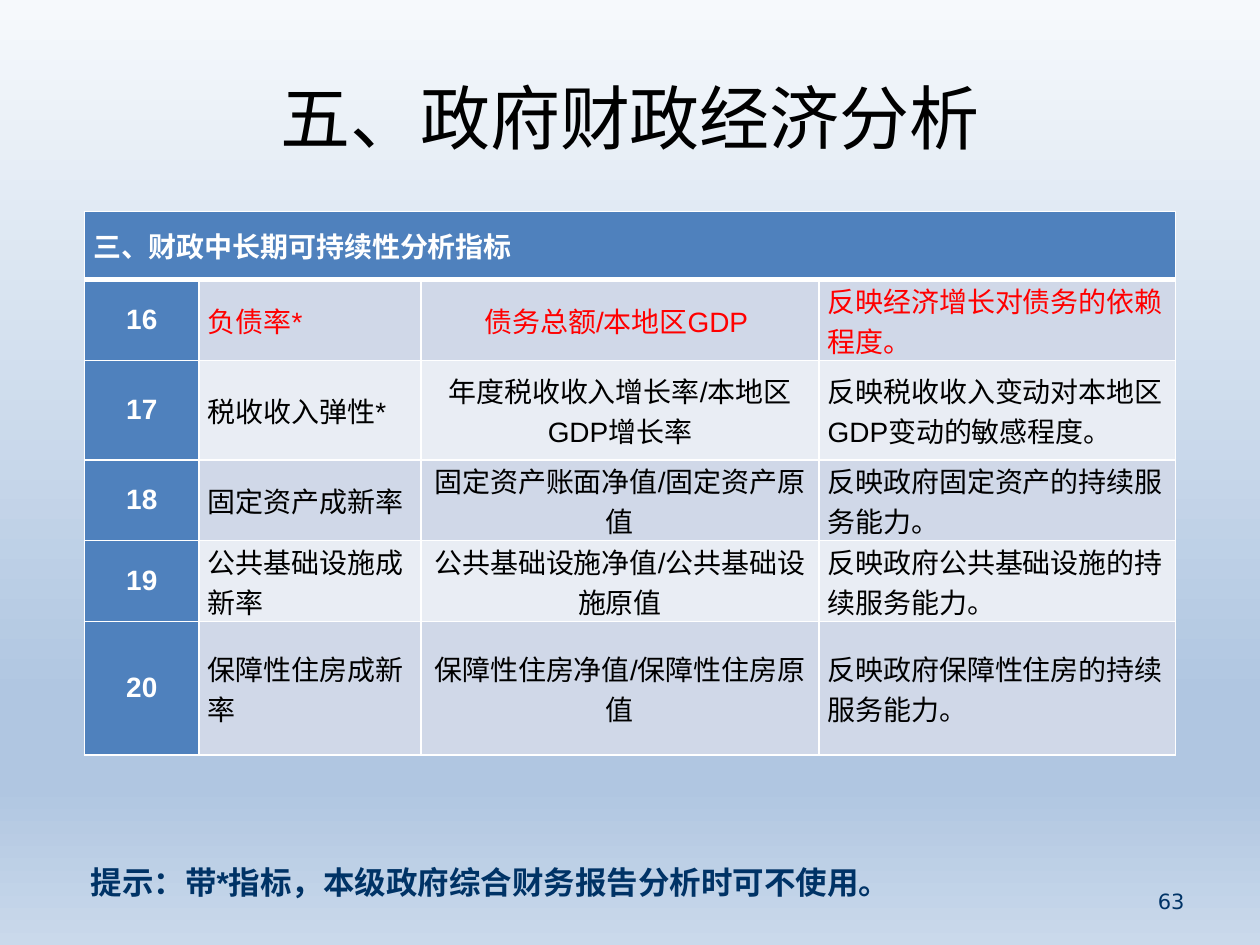
"""Build the slide on long-term fiscal sustainability indicators."""
from dataclasses import dataclass

from lxml import etree
from pptx import Presentation
from pptx import util as u
from pptx.dml import color
from pptx.enum import text
from pptx.oxml import ns

WHITE, BLACK, RED, NAVY, BLUE = "FFFFFF", "000000", "FF0000", "003366", "4F81BD"
BANDS = ("D0D8E8", "E9EDF4")
BACKGROUND_STOPS = ((0, "F6F9FC"), (74, "B0C6E1"), (83, "B0C6E1"), (100, "CAD9EB"))
COLUMN_WIDTHS = (0.91, 1.76, 3.16, 2.83)
ROW_HEIGHTS = (0.54, 0.54, 0.79, 0.56, 0.64, 1.06)
LEFT, CENTER, RIGHT = text.PP_ALIGN.LEFT, text.PP_ALIGN.CENTER, text.PP_ALIGN.RIGHT
CELL_FORMAT = {
    "margin_left": u.Inches(0.07),
    "margin_right": u.Inches(0.07),
    "margin_top": 0,
    "margin_bottom": 0,
    "vertical_anchor": text.MSO_ANCHOR.MIDDLE,
}


@dataclass
class Style:
    size: float
    color: str
    bold: bool = False
    align: text.PP_ALIGN = LEFT
    font: str = "Arial"


@dataclass
class Indicator:
    number: str
    name: str
    formula: str
    meaning: str
    color: str = BLACK


INDICATORS = (
    Indicator("16", "负债率*", "债务总额/本地区GDP ", "反映经济增长对债务的依赖程度。", RED),
    Indicator("17", "税收收入弹性*", "年度税收收入增长率/本地区GDP增长率",
              "反映税收收入变动对本地区GDP变动的敏感程度。"),
    Indicator("18", "固定资产成新率", "固定资产账面净值/固定资产原值",
              "反映政府固定资产的持续服务能力。"),
    Indicator("19", "公共基础设施成新率", "公共基础设施净值/公共基础设施原值",
              "反映政府公共基础设施的持续服务能力。"),
    Indicator("20", "保障性住房成新率", "保障性住房净值/保障性住房原值",
              "反映政府保障性住房的持续服务能力。"),
)


def rgb(value: str) -> color.RGBColor:
    return color.RGBColor.from_string(value)


def apply_format(target, values: dict) -> None:
    for name, value in values.items():
        setattr(target, name, value)


def add_color(parent, tag: str, value: str, **attributes: str) -> None:
    holder = etree.SubElement(parent, ns.qn(tag), attributes)
    etree.SubElement(holder, ns.qn("a:srgbClr"), val=value)


def write(frame, content: str, style: Style) -> None:
    paragraph = frame.paragraphs[0]
    paragraph.alignment = style.align
    run = paragraph.add_run()
    run.text = content
    apply_format(run.font, {"size": u.Pt(style.size), "bold": style.bold, "name": style.font})
    run.font.color.rgb = rgb(style.color)


def set_background(slide) -> None:
    fill = slide.background.fill
    fill.gradient()
    fill.gradient_angle = 270
    stops = slide.background._cSld.find(".//" + ns.qn("a:gsLst"))
    for stop in list(stops):
        stops.remove(stop)
    for percent, value in BACKGROUND_STOPS:
        add_color(stops, "a:gs", value, pos=str(percent * 1000))


def format_cell(cell, fill: str, top: float = 1, bottom: float = 1) -> None:
    properties = cell._tc.get_or_add_tcPr()
    for side, width in {"L": 1, "R": 1, "T": top, "B": bottom}.items():
        line = etree.SubElement(properties, ns.qn(f"a:ln{side}"), w=str(u.Pt(width)))
        add_color(line, "a:solidFill", WHITE)
    cell.fill.solid()
    cell.fill.fore_color.rgb = rgb(fill)
    apply_format(cell, CELL_FORMAT)


def add_indicator_table(slide) -> None:
    table = slide.shapes.add_table(
        len(ROW_HEIGHTS), len(COLUMN_WIDTHS), u.Inches(0.67), u.Inches(1.68),
        u.Inches(sum(COLUMN_WIDTHS)), u.Inches(sum(ROW_HEIGHTS))).table
    for column, width in zip(table.columns, COLUMN_WIDTHS):
        column.width = u.Inches(width)
    for row, height in zip(table.rows, ROW_HEIGHTS):
        row.height = u.Inches(height)

    for cell in table.rows[0].cells:
        format_cell(cell, BLUE, bottom=3)
    header = table.cell(0, 0)
    header.merge(table.cell(0, len(COLUMN_WIDTHS) - 1))
    write(header.text_frame, "三、财政中长期可持续性分析指标", Style(16, WHITE, bold=True))

    for index, item in enumerate(INDICATORS):
        band = BANDS[index % 2]
        columns = (
            (item.number, BLUE, Style(16, WHITE, True, CENTER)),
            (item.name, band, Style(16, item.color)),
            (item.formula, band, Style(16, item.color, align=CENTER)),
            (item.meaning, band, Style(16, item.color)),
        )
        for column, (content, fill, style) in enumerate(columns):
            cell = table.cell(index + 1, column)
            format_cell(cell, fill, top=3 if index == 0 else 1)
            write(cell.text_frame, content, style)


def add_text(slide, box: tuple[float, ...], content: str, style: Style,
             anchor: text.MSO_ANCHOR = text.MSO_ANCHOR.TOP) -> None:
    frame = slide.shapes.add_textbox(*map(u.Inches, box)).text_frame
    apply_format(frame, {"word_wrap": True, "vertical_anchor": anchor})
    write(frame, content, style)


def main() -> None:
    presentation = Presentation()
    apply_format(presentation, {"slide_width": u.Inches(10), "slide_height": u.Inches(7.5)})
    slide = presentation.slides.add_slide(presentation.slide_layouts[5])
    set_background(slide)
    add_indicator_table(slide)
    add_text(slide, (0.62, 6.8, 8.59, 0.4), "提示：带*指标，本级政府综合财务报告分析时可不使用。",
             Style(18, NAVY, bold=True))
    title = slide.shapes.title
    apply_format(title, {"left": u.Inches(0.5), "top": u.Inches(0.3),
                         "width": u.Inches(9), "height": u.Inches(1.25)})
    write(title.text_frame, "五、政府财政经济分析", Style(40, BLACK, align=CENTER, font="Calibri"))
    add_text(slide, (7.17, 6.95, 2.33, 0.4), "63",
             Style(12, NAVY, align=RIGHT, font="DejaVu Sans"), text.MSO_ANCHOR.MIDDLE)
    presentation.save("out.pptx")


if __name__ == "__main__":
    main()
